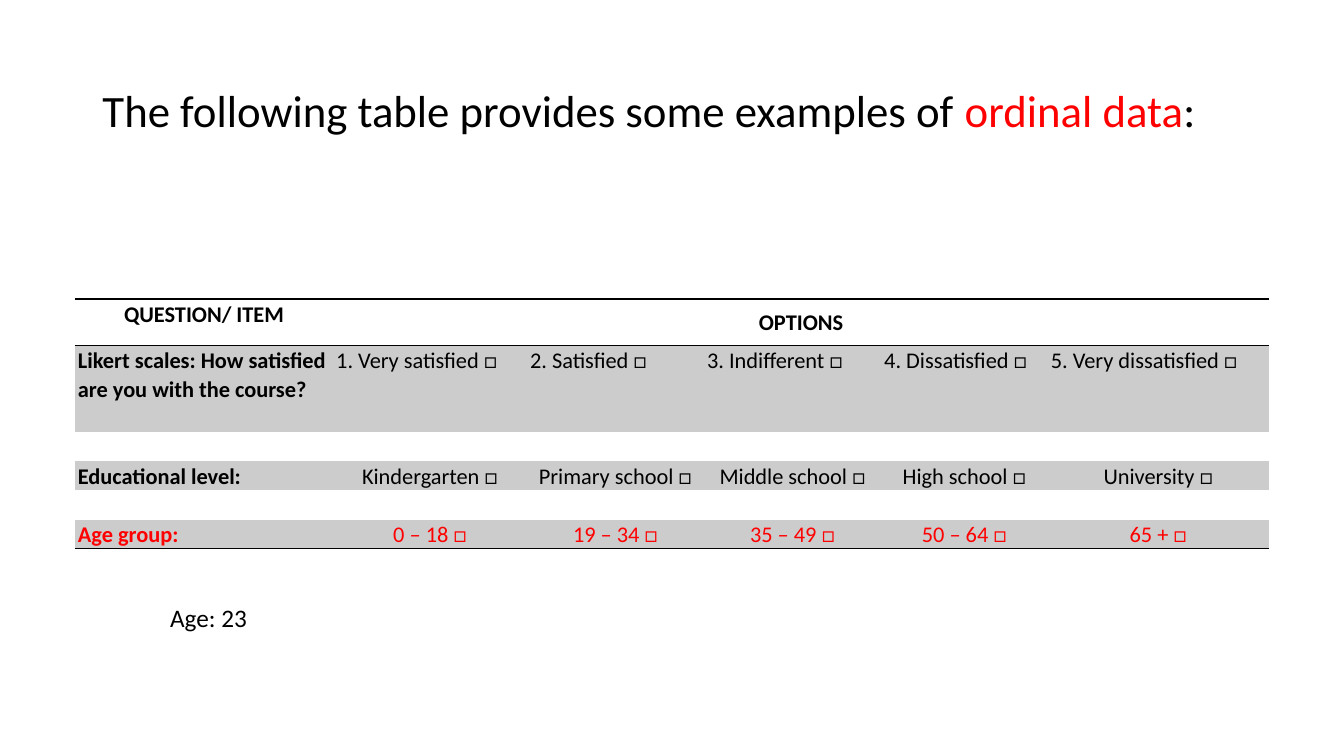
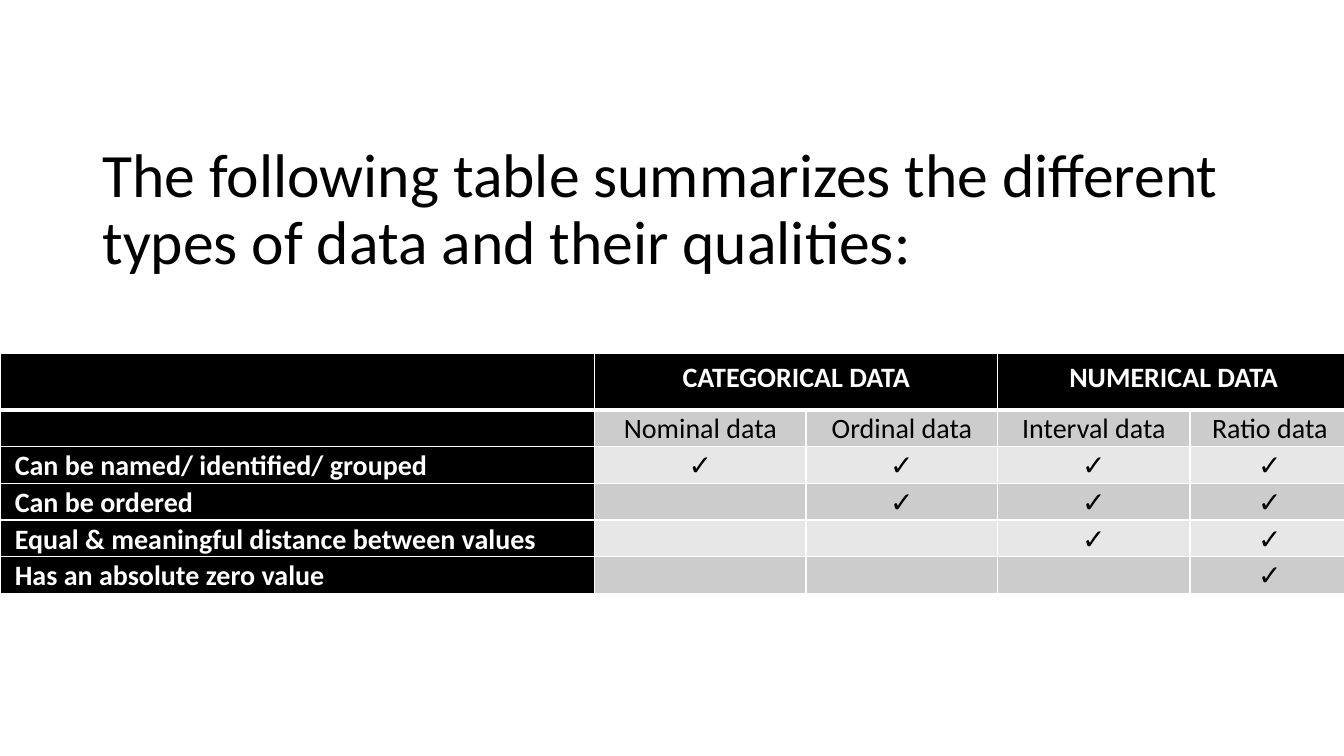
"""Build two slides on ordinal data and on the qualities of data types."""
from dataclasses import dataclass

from lxml.etree import SubElement
from pptx import Presentation
from pptx.dml.color import RGBColor as RGB
from pptx.enum.text import MSO_ANCHOR as ANCHOR, MSO_AUTO_SIZE as AUTO, PP_ALIGN as ALIGN
from pptx.oxml.ns import qn
from pptx.util import Pt


@dataclass(frozen=True)
class Theme:
    font: str = "Calibri"
    black: RGB = RGB(0, 0, 0)
    white: RGB = RGB(255, 255, 255)
    red: RGB = RGB(255, 0, 0)
    grey: RGB = RGB(0xCC, 0xCC, 0xCC)
    pale: RGB = RGB(0xE7, 0xE7, 0xE7)
    ordinal_title: int = 32
    summary_title: int = 44
    options: int = 16
    note: int = 18
    summary: int = 20
    title_spacing: float = 0.9
    cell_spacing: float = 1.07
    plain_table: str = "{2D5ABB26-0587-4C30-8999-92F81FD0307C}"


theme = Theme()


def add_titled_slide(top, size, parts):
    slide = deck.slides.add_slide(deck.slide_layouts[5])
    title = slide.shapes.title
    title.left, title.top, title.width, title.height = Pt(66), Pt(top), Pt(828), Pt(104.4)
    title.text_frame.auto_size = AUTO.NONE
    title.text_frame.vertical_anchor = ANCHOR.MIDDLE
    line = title.text_frame.paragraphs[0]
    line.alignment, line.line_spacing = ALIGN.LEFT, theme.title_spacing
    line.font.name, line.font.size = theme.font, Pt(size)
    for words, colour in parts:
        run = line.add_run()
        run.text = words
        run.font.color.rgb = colour
    return slide


def write_cell(cell, text, size, colour, bold, centred, inset, fill, line, borders):
    cell.margin_left = cell.margin_right = Pt(inset[0])
    cell.margin_top = cell.margin_bottom = Pt(inset[1])
    properties = cell._tc.get_or_add_tcPr()
    for side, width in borders.items():
        edge = SubElement(properties, qn(f"a:ln{side}"), w=str(Pt(width)))
        paint = SubElement(edge, qn("a:solidFill"))
        SubElement(paint, qn("a:srgbClr"), val=str(line))
    if fill is None:
        cell.fill.background()
    else:
        cell.fill.solid()
        cell.fill.fore_color.rgb = fill
    cell.text = text
    words = cell.text_frame.paragraphs[0]
    words.alignment = ALIGN.CENTER if centred else ALIGN.LEFT
    words.line_spacing = theme.cell_spacing
    words.font.name, words.font.size = theme.font, Pt(size)
    words.font.bold, words.font.color.rgb = bold, colour


deck = Presentation()
deck.slide_width, deck.slide_height = Pt(960), Pt(540)

ordinal_slide = add_titled_slide(28.8, theme.ordinal_title, [
    ("The following table provides some examples of ", theme.black),
    ("ordinal data", theme.red),
    (":", theme.black),
])
summary_slide = add_titled_slide(98.6, theme.summary_title, [
    ("The following table summarizes the different types of data and their qualities:", theme.black),
])

option_rows = [
    ["QUESTION/ ITEM", "OPTIONS", "", "", "", ""],
    ["Likert scales: How satisfied are you with the course?", "1. Very satisfied □",
     "2. Satisfied □", "3. Indifferent □", "4. Dissatisfied □", "5. Very dissatisfied □"],
    [""] * 6,
    ["Educational level:", "Kindergarten □", "Primary school □", "Middle school □",
     "High school □", "University □"],
    [""] * 6,
    ["Age group:", "0 – 18 □", "19 – 34 □", "35 – 49 □", "50 – 64 □", "65 + □"],
]
summary_rows = [
    ["", "CATEGORICAL DATA", "", "NUMERICAL DATA", ""],
    ["", "Nominal data", "Ordinal data", "Interval data", "Ratio data"],
    ["Can be named/ identified/ grouped", "✓", "✓", "✓", "✓"],
    ["Can be ordered", "", "✓", "✓", "✓"],
    ["Equal & meaningful distance between values", "", "", "✓", "✓"],
    ["Has an absolute zero value", "", "", "", "✓"],
]

tables = []
for slide, rows, left, top, widths, heights, spans in [
    (ordinal_slide, option_rows, 53.5, 213.6, [184.5, 138.5, 126.5, 126.5, 119, 158],
     [33, 61.8] + [20.9] * 4, [(1, 5)]),
    (summary_slide, summary_rows, 0, 252.6, [424.8, 151, 137, 137.3, 113.9],
     [40.2] + [26.1] * 5, [(1, 2), (3, 4)]),
]:
    table = slide.shapes.add_table(len(rows), len(widths), Pt(left), Pt(top),
                                   Pt(sum(widths)), Pt(sum(heights))).table
    table.first_row = table.horz_banding = False
    table._tbl.tblPr.find(qn("a:tableStyleId")).text = theme.plain_table
    for column, width in zip(table.columns, widths):
        column.width = Pt(width)
    for row, height in zip(table.rows, heights):
        row.height = Pt(height)
    for first, last in spans:
        table.cell(0, first).merge(table.cell(0, last))
    tables.append(table)
options_table, summary_table = tables

option_borders = {0: {"T": 1, "B": 1}, 5: {"B": 1}}
for r, row in enumerate(option_rows):
    for c, text in enumerate(row):
        write_cell(
            options_table.cell(r, c), text, theme.options,
            colour=theme.red if r == 5 else theme.black,
            bold=r == 0 or c == 0,
            centred=r == 0 or (r > 1 and c > 0),
            inset=(11.5, 5.8) if r == 0 and c > 0 else (2.2, 0),
            fill=theme.grey if r % 2 else None,
            line=theme.black, borders=option_borders.get(r, {}),
        )

for r, row in enumerate(summary_rows):
    for c, text in enumerate(row):
        heading = r == 0 or c == 0
        write_cell(
            summary_table.cell(r, c), text, theme.summary,
            colour=theme.white if heading else theme.black,
            bold=heading,
            centred=c > 0,
            inset=(6.5, 3.6) if r == 0 else (10.6, 0),
            fill=theme.black if heading else theme.grey if r % 2 else theme.pale,
            line=theme.white,
            borders={"L": 1, "R": 1, "T": 3 if r == 1 else 1, "B": 3 if r == 0 else 1},
        )

age_note = ordinal_slide.shapes.add_textbox(Pt(114.5), Pt(427), Pt(139), Pt(29)).text_frame
age_note.word_wrap = True
age_note.auto_size = AUTO.SHAPE_TO_FIT_TEXT
age_note.text = "Age: 23"
age = age_note.paragraphs[0]
age.font.name, age.font.size, age.font.color.rgb = theme.font, Pt(theme.note), theme.black

deck.save("out.pptx")
